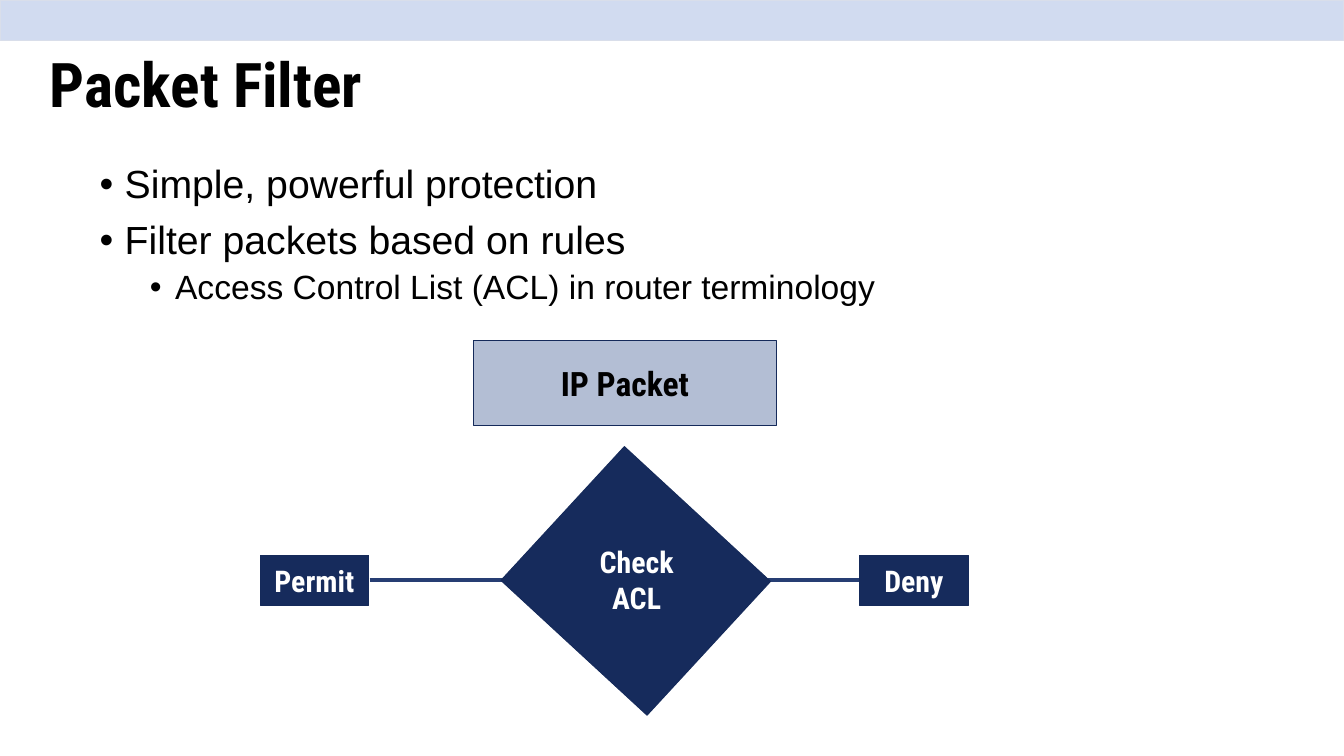
from dataclasses import dataclass

from lxml import etree
from pptx import Presentation
from pptx import util as u
from pptx.dml import color
from pptx.enum import shapes, text
from pptx.oxml import ns


@dataclass
class Theme:
    ink: str = "000000"
    white: str = "FFFFFF"
    navy: str = "162B5C"
    outline: str = "152A5A"
    link: str = "263E73"
    packet: str = "B3BED4"
    band: str = "D1DBF0"
    band_edge: str = "D9DEEA"
    heading_font: str = "Roboto Condensed"
    body_font: str = "Arial"
    title: int = 66
    bullet: int = 42
    sub_bullet: int = 36
    packet_label: int = 36
    label: int = 32


theme = Theme()
rgb = color.RGBColor.from_string
CENTER = text.PP_ALIGN.CENTER
LEFT = text.PP_ALIGN.LEFT


def write(paragraph, words, size=theme.label, ink=theme.white,
          font=theme.heading_font, bold=True, align=CENTER, spacing=1.0):
    """Add one formatted run to a paragraph."""
    paragraph.alignment = align
    paragraph.line_spacing = spacing
    run = paragraph.add_run()
    run.text = words
    run.font.name = font
    run.font.size = u.Pt(size)
    run.font.bold = bold
    run.font.color.rgb = rgb(ink)


def add_box(left, top, width, height, fill=theme.navy, edge=theme.outline):
    """Add a flat rectangle with a thin outline."""
    box = slide.shapes.add_shape(shapes.MSO_SHAPE.RECTANGLE, u.Pt(left), u.Pt(top),
                                 u.Pt(width), u.Pt(height))
    box.shadow.inherit = False
    box.fill.solid()
    box.fill.fore_color.rgb = rgb(fill)
    box.line.color.rgb = rgb(edge)
    box.line.width = u.Pt(1)
    box.text_frame.word_wrap = True
    box.text_frame.vertical_anchor = text.MSO_ANCHOR.MIDDLE
    return box


prs = Presentation()
prs.slide_width, prs.slide_height = u.Pt(1440), u.Pt(810)
slide = prs.slides.add_slide(prs.slide_layouts[1])

# Top band
add_box(0, 0, 1440, 43.2, fill=theme.band, edge=theme.band_edge)

# Title and list share the template's placeholders
title, rules = slide.placeholders
for holder, left, top, height, anchor in (
    (title, 46, 15.8, 156.2, text.MSO_ANCHOR.MIDDLE),
    (rules, 99.4, 172.8, 548.6, text.MSO_ANCHOR.TOP),
):
    holder.left, holder.top = u.Pt(left), u.Pt(top)
    holder.width, holder.height = u.Pt(1242), u.Pt(height)
    holder.text_frame.auto_size = text.MSO_AUTO_SIZE.NONE
    holder.text_frame.vertical_anchor = anchor

write(title.text_frame.paragraphs[0], "Packet Filter", size=theme.title,
      ink=theme.ink, align=LEFT, spacing=0.9)

# Bullets: words, level, space before
bullets = [
    ("Simple, powerful protection", 0, 0),
    ("Filter packets based on rules", 0, 15),
    ("Access Control List (ACL) in router terminology", 1, 7.5),
]
for i, (words, level, before) in enumerate(bullets):
    item = rules.text_frame.paragraphs[0] if i == 0 else rules.text_frame.add_paragraph()
    item.level = level
    props = item._p.get_or_add_pPr()
    props.set("marL", str(u.Pt(27 + 54 * level)))
    props.set("indent", str(u.Pt(-27)))
    etree.SubElement(props, ns.qn("a:buFont"), typeface=theme.body_font)
    etree.SubElement(props, ns.qn("a:buChar"), char="•")
    item.space_before = u.Pt(before)
    write(item, words, size=theme.sub_bullet if level else theme.bullet,
          ink=theme.ink, font=theme.body_font, bold=False, align=LEFT, spacing=0.9)

# Line from Permit through the decision to Deny
branch = slide.shapes.add_connector(shapes.MSO_CONNECTOR.STRAIGHT, u.Pt(396), u.Pt(621.4),
                                    u.Pt(922.3), u.Pt(621.4))
branch.line.color.rgb = rgb(theme.link)
branch.line.width = u.Pt(4.5)
etree.SubElement(branch._element.spPr, ns.qn("a:effectLst"))

# Decision: a turned rectangle with its upright label
decision = add_box(574.6, 524.9, 213.1, 195.1)
decision.rotation = 42.7
check = slide.shapes.add_textbox(u.Pt(635), u.Pt(578.9), u.Pt(94.3), u.Pt(85))
check.text_frame.word_wrap = False
check.text_frame.auto_size = text.MSO_AUTO_SIZE.SHAPE_TO_FIT_TEXT
write(check.text_frame.paragraphs[0], "Check")
write(check.text_frame.add_paragraph(), "ACL")

# Outcomes
for outcome, left in (("Deny", 920.9), ("Permit", 278.6)):
    write(add_box(left, 594.7, 116.6, 54).text_frame.paragraphs[0], outcome)

# Incoming packet
packet = add_box(507.6, 365, 324, 91.4, fill=theme.packet)
write(packet.text_frame.paragraphs[0], "IP Packet", size=theme.packet_label, ink=theme.ink)

prs.save("out.pptx")
